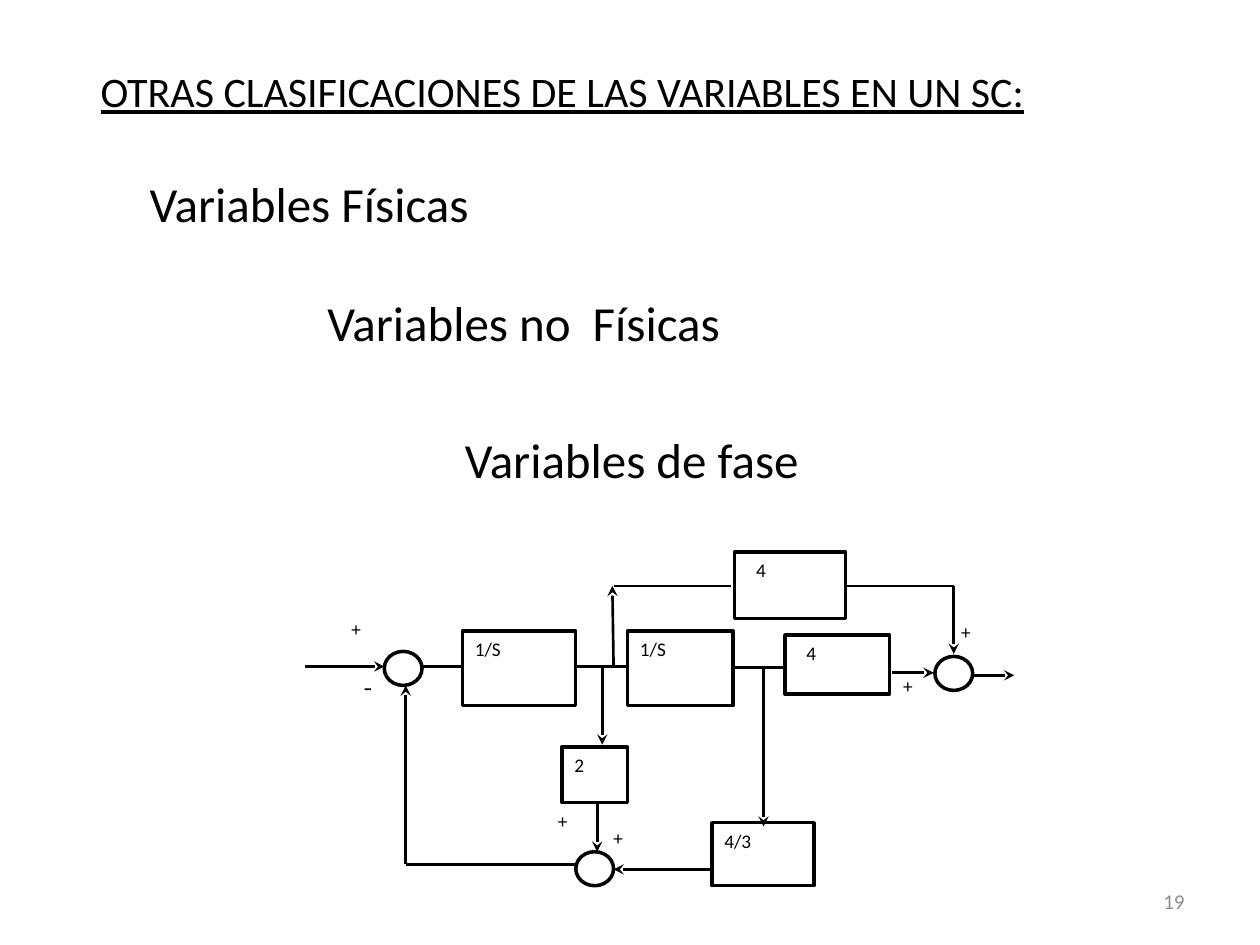
from dataclasses import dataclass
from typing import NamedTuple

import pptx
import pptx.dml.color
import pptx.enum.shapes
import pptx.enum.text
import pptx.oxml
import pptx.oxml.ns
import pptx.util

PX = 9144  # 100 px to the inch
MSO_SHAPE = pptx.enum.shapes.MSO_SHAPE
PP_ALIGN = pptx.enum.text.PP_ALIGN
ANCHOR = pptx.enum.text.MSO_ANCHOR


@dataclass(frozen=True)
class Theme:
    ink: str = "000000"
    paper: str = "FFFFFF"
    muted: str = "8C8C8C"
    font: str = "Calibri"
    serif: str = "Times New Roman"
    title: int = 24
    heading: int = 28
    label: int = 11
    minus: int = 14
    number: int = 12
    outline: float = 2
    wire: float = 1.5


THEME = Theme()


class Heading(NamedTuple):
    x: int
    y: int
    w: int
    text: str


class Block(NamedTuple):
    x: int
    y: int
    w: int
    h: int
    text: str
    indent: int = 0
    after: int = 10


class Sign(NamedTuple):
    x: int
    y: int
    text: str = "+"
    size: int = THEME.label
    font: str = THEME.font


class Wire(NamedTuple):
    x1: int
    y1: int
    x2: int
    y2: int
    arrow: bool = False


HEADINGS = [
    Heading(109, 133, 276, "Variables Físicas"),
    Heading(250, 227, 335, "Variables no  Físicas"),
    Heading(359, 336, 288, "Variables de fase"),
]
BLOCKS = [
    Block(367, 501, 90, 59, "1/S"),
    Block(498, 501, 84, 59, "1/S"),
    Block(623, 504, 83, 47, "4", indent=7),
    Block(583, 438, 88, 53, "4", indent=7, after=0),
    Block(446, 593, 52, 44, "2"),
    Block(565, 653, 81, 50, "4/3"),
]
SUM_W, SUM_H = 30, 27
SUMS = [(305, 517), (742, 521), (457, 676)]
SIGNS = [
    Sign(269, 485),
    Sign(279, 528, "-", THEME.minus, THEME.serif),
    Sign(433, 637),
    Sign(477, 651),
    Sign(753, 487),
    Sign(707, 530),
]
WIRES = [
    # Forward path
    Wire(242, 529, 305, 529, True),
    Wire(335, 529, 367, 529),
    Wire(457, 529, 497, 529),
    Wire(583, 530, 623, 530),
    Wire(708, 534, 741, 534, True),
    Wire(772, 536, 805, 536, True),
    # Upper branch
    Wire(487, 529, 486, 465, True),
    Wire(487, 465, 580, 465),
    Wire(671, 465, 757, 465),
    Wire(757, 465, 757, 519, True),
    # Feedback path
    Wire(478, 529, 478, 591, True),
    Wire(474, 638, 474, 676, True),
    Wire(606, 531, 606, 656, True),
    Wire(565, 690, 487, 690, True),
    Wire(322, 686, 457, 686),
    Wire(322, 686, 322, 544, True),
]


def rgb(value: str) -> pptx.dml.color.RGBColor:
    return pptx.dml.color.RGBColor.from_string(value)


def write(sp, text: str, *, size: int, font: str = THEME.font,
          color: str = THEME.ink, underline: bool = False,
          align=PP_ALIGN.LEFT, anchor=ANCHOR.TOP, wrap: bool = True,
          indent: int = 0, after: int = 0) -> None:
    tf = sp.text_frame
    tf.word_wrap = wrap
    tf.vertical_anchor = anchor
    tf.margin_left = (10 + indent) * PX
    p = tf.paragraphs[0]
    p.alignment = align
    p.space_after = pptx.util.Pt(after)
    r = p.add_run()
    r.text = text
    r.font.size = pptx.util.Pt(size)
    r.font.name = font
    r.font.color.rgb = rgb(color)
    if underline:
        r.font.underline = True


def add_text(s, x: int, y: int, w: int, h: int, text: str, **fmt) -> None:
    write(s.shapes.add_textbox(x * PX, y * PX, w * PX, h * PX), text, **fmt)


def add_outline(s, kind, x: int, y: int, w: int, h: int):
    sp = s.shapes.add_shape(kind, x * PX, y * PX, w * PX, h * PX)
    sp.shadow.inherit = False
    sp.fill.background()
    sp.line.color.rgb = rgb(THEME.ink)
    sp.line.width = pptx.util.Pt(THEME.outline)
    return sp


def add_block(s, b: Block) -> None:
    sp = add_outline(s, MSO_SHAPE.RECTANGLE, b.x, b.y, b.w, b.h)
    sp.fill.solid()
    sp.fill.fore_color.rgb = rgb(THEME.paper)
    write(sp, b.text, size=THEME.label, indent=b.indent, after=b.after)


def add_wire(s, w: Wire) -> None:
    sp = s.shapes.add_connector(pptx.enum.shapes.MSO_CONNECTOR.STRAIGHT,
                                w.x1 * PX, w.y1 * PX, w.x2 * PX, w.y2 * PX)
    sp.line.color.rgb = rgb(THEME.ink)
    sp.line.width = pptx.util.Pt(THEME.wire)
    qn = pptx.oxml.ns.qn
    if w.arrow:
        ln = sp.line._get_or_add_ln()
        ln.append(ln.makeelement(qn("a:tailEnd"), {"type": "stealth"}))
    sp_pr = sp._element.spPr
    sp_pr.append(sp_pr.makeelement(qn("a:effectLst"), {}))


def main() -> None:
    prs = pptx.Presentation()
    prs.slide_width, prs.slide_height = 1000 * PX, 750 * PX
    s = prs.slides.add_slide(prs.slide_layouts[6])

    # Title, headings and slide number
    add_text(s, 70, 47, 759, 81, "OTRAS CLASIFICACIONES DE LAS VARIABLES EN UN SC:",
             size=THEME.title, underline=True, wrap=False)
    for h in HEADINGS:
        add_text(s, h.x, h.y, h.w, 57, h.text, size=THEME.heading, wrap=False)
    add_text(s, 717, 695, 233, 40, "19", size=THEME.number, color=THEME.muted,
             align=PP_ALIGN.RIGHT, anchor=ANCHOR.MIDDLE)

    # Block diagram
    for sign in SIGNS:
        add_text(s, sign.x, sign.y, 47, 43, sign.text, size=sign.size, font=sign.font)
    for block in BLOCKS:
        add_block(s, block)
    for x, y in SUMS:
        add_outline(s, MSO_SHAPE.OVAL, x, y, SUM_W, SUM_H)
    for wire in WIRES:
        add_wire(s, wire)

    prs.save("out.pptx")


if __name__ == "__main__":
    main()
